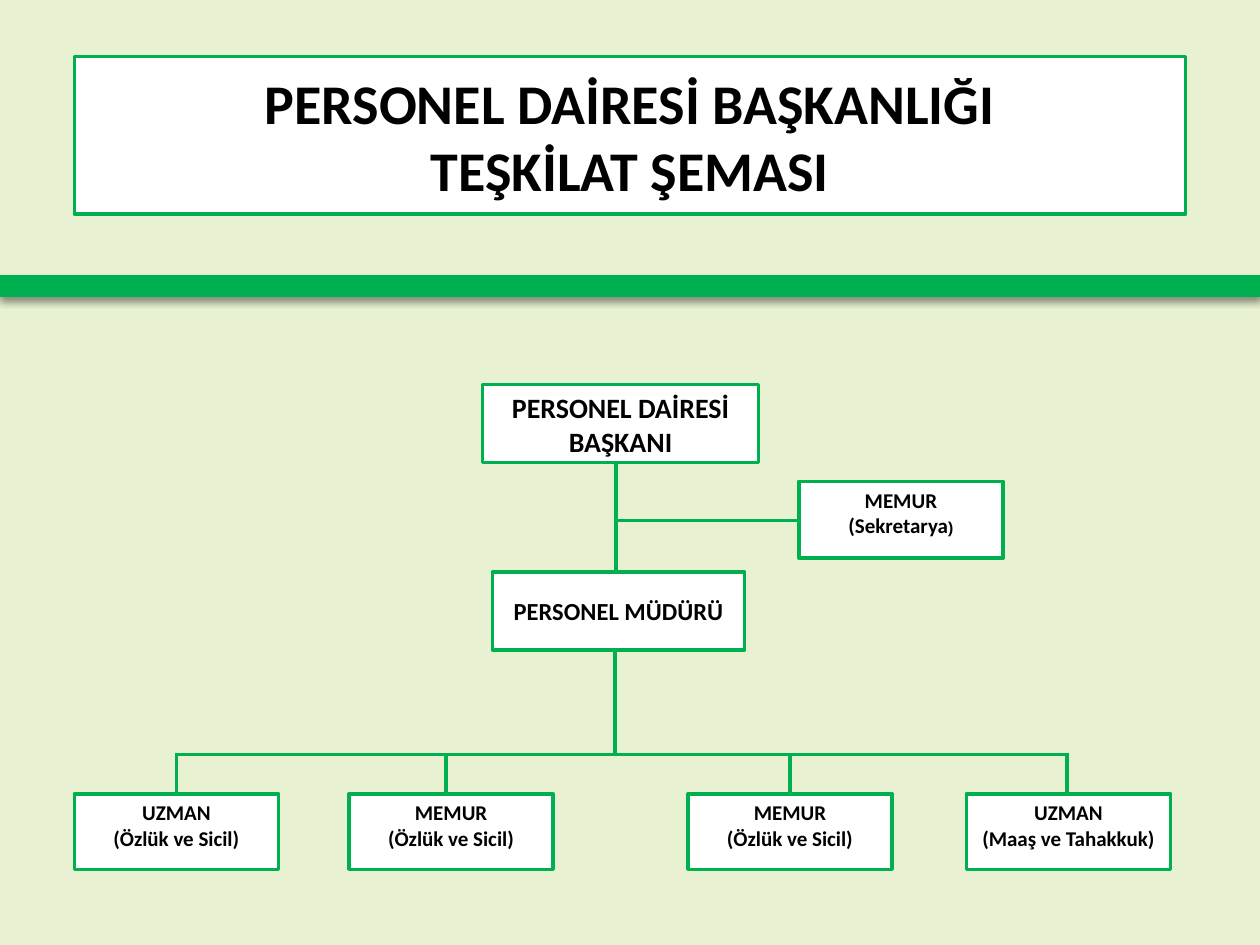
from lxml import etree
from pptx import Presentation
from pptx.dml.color import RGBColor
from pptx.enum.shapes import MSO_CONNECTOR, MSO_SHAPE
from pptx.enum.text import MSO_ANCHOR, PP_ALIGN
from pptx.oxml.ns import qn
from pptx.util import Inches, Pt

RECTANGLE = MSO_SHAPE.RECTANGLE
STRAIGHT = MSO_CONNECTOR.STRAIGHT
TOP, MIDDLE = MSO_ANCHOR.TOP, MSO_ANCHOR.MIDDLE
CENTER = PP_ALIGN.CENTER

COLORS = {name: RGBColor.from_string(value) for name, value in {
    "background": "E8F2D3",
    "green": "00B050",
    "box": "FFFFFF",
    "text": "000000",
}.items()}

prs = Presentation()
prs.slide_width, prs.slide_height = Inches(10), Inches(7.5)
UNIT = prs.slide_width / 100  # grid of 100 columns by 75 rows

slide = prs.slides.add_slide(prs.slide_layouts[6])
slide.background.fill.solid()
slide.background.fill.fore_color.rgb = COLORS["background"]


def grid(*cells):
    return [round(cell * UNIT) for cell in cells]


def add_box(place, paragraphs, size, anchor=TOP):
    """Add a framed box; each paragraph is a list of (text, size, font) runs or a string."""
    box = slide.shapes.add_shape(RECTANGLE, *grid(*place))
    box.shadow.inherit = False
    box.fill.solid()
    box.fill.fore_color.rgb = COLORS["box"]
    box.line.color.rgb = COLORS["green"]
    box.line.width = Pt(2)
    frame = box.text_frame
    frame.word_wrap = True
    frame.vertical_anchor = anchor
    for index, content in enumerate(paragraphs):
        paragraph = frame.add_paragraph() if index else frame.paragraphs[0]
        paragraph.alignment = CENTER
        runs = [(content, size, "Calibri")] if isinstance(content, str) else content
        for text, points, font in runs:
            run = paragraph.add_run()
            run.text = text
            run.font.size = Pt(points)
            run.font.name = font
            run.font.bold = True
            run.font.color.rgb = COLORS["text"]


# Divider band with a soft shadow below
band = slide.shapes.add_shape(RECTANGLE, *grid(0, 21.9, 100, 1.6))
band.fill.solid()
band.fill.fore_color.rgb = COLORS["green"]
band.line.color.rgb = COLORS["green"]
band.line.width = Pt(0.75)
band.shadow.inherit = False
effects = band.element.spPr.find(qn("a:effectLst"))
shadow = etree.SubElement(effects, qn("a:outerShdw"), blurRad=str(Pt(5)),
                          dist=str(Pt(2)), dir="5400000", rotWithShape="0")
shade = etree.SubElement(shadow, qn("a:srgbClr"), val="000000")
etree.SubElement(shade, qn("a:alpha"), val="43000")

# Branches of the chart
TRUNK, BUS, STAFF_TOP = 48.8, 59.9, 63
drops = [14, 35.4, 62.7, 84.7]
branches = [
    (TRUNK + 0.1, 36.6, TRUNK + 0.1, 45.5),
    (TRUNK, 45.8, TRUNK, BUS),
    (TRUNK, 41.3, 63.7, 41.3),
    (drops[0], BUS, drops[-1], BUS),
] + [(drop, BUS - 0.1, drop, STAFF_TOP + 0.1) for drop in drops]
for ends in branches:
    branch = slide.shapes.add_connector(STRAIGHT, *grid(*ends))
    branch.line.color.rgb = COLORS["green"]
    branch.line.width = Pt(2)
    etree.SubElement(branch.element.spPr, qn("a:effectLst"))

# Title and posts
add_box((5.9, 4.5, 88.2, 12.5),
        ["PERSONEL DAİRESİ BAŞKANLIĞI", "TEŞKİLAT ŞEMASI"], 32, MIDDLE)
add_box((38.3, 30.5, 21.9, 6.2), ["PERSONEL DAİRESİ BAŞKANI"], 16)
add_box((39.1, 45.4, 20, 6.2), ["PERSONEL MÜDÜRÜ"], 14, MIDDLE)
add_box((63.4, 38.2, 16.2, 6.1),
        ["MEMUR", [("(Sekretarya", 12, "Calibri"), (")", 9, "Arial")]], 12)

staff = [
    (5.9, "UZMAN", "(Özlük ve Sicil)"),
    (27.7, "MEMUR", "(Özlük ve Sicil)"),
    (54.6, "MEMUR", "(Özlük ve Sicil)"),
    (76.7, "UZMAN", "(Maaş ve Tahakkuk)"),
]
for left, post, duty in staff:
    add_box((left, STAFF_TOP, 16.2, 6), [post, duty], 12)

prs.save("out.pptx")
